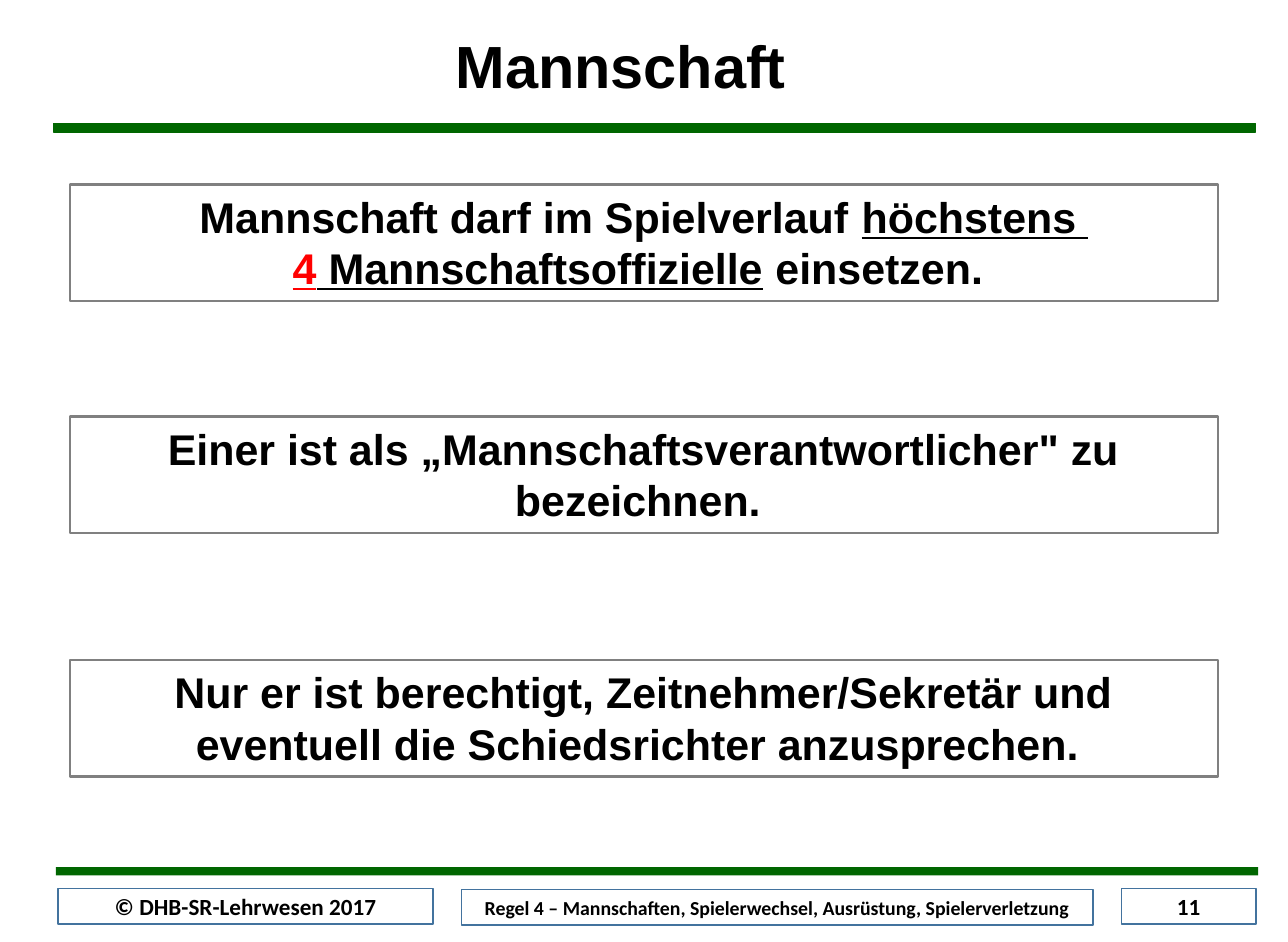
from pptx import Presentation
from pptx.dml.color import RGBColor
from pptx.enum.shapes import MSO_SHAPE
from pptx.enum.text import MSO_ANCHOR, MSO_AUTO_SIZE, PP_ALIGN
from pptx.util import Inches, Pt

RECT = MSO_SHAPE.RECTANGLE
CENTER = PP_ALIGN.CENTER
TOP, MIDDLE = MSO_ANCHOR.TOP, MSO_ANCHOR.MIDDLE

GREEN, GREY, BLUE = "006600", "808080", "43739E"
BLACK, WHITE, RED = "000000", "FFFFFF", "FF0000"

TITLE = "Mannschaft"
BARS = [(0.45, 1.04, GREEN), (0.47, 7.29, None)]
FOOTERS = [
    (0.49, 7.47, 3.15, 14, "© DHB-SR-Lehrwesen 2017"),
    (9.43, 7.47, 1.13, 14, "11"),
    (3.88, 7.48, 5.31, 12,
     "Regel 4 – Mannschaften, Spielerwechsel, Ausrüstung, Spielerverletzung"),
]
RULES = [
    (1.55, [
        [("Mannschaft darf im Spielverlauf ", BLACK, False),
         ("höchstens ", BLACK, True)],
        [("4", RED, True),
         (" Mannschaftsoffizielle", BLACK, True),
         (" einsetzen. ", BLACK, False)],
    ]),
    (3.5, [[("Einer ist als „Mannschaftsverantwortlicher\" zu bezeichnen. ",
             BLACK, False)]]),
    (5.55, [[("Nur er ist berechtigt, Zeitnehmer/Sekretär und eventuell "
              "die Schiedsrichter anzusprechen.\u00a0", BLACK, False)]]),
]


def rgb(color):
    return RGBColor.from_string(color)


def add_rect(s, box, fill=None, line=None, width=1):
    sp = s.shapes.add_shape(RECT, *[Inches(v) for v in box])
    sp.shadow.inherit = False
    if fill:
        sp.fill.solid()
        sp.fill.fore_color.rgb = rgb(fill)
    else:
        sp.fill.background()
    if line:
        sp.line.color.rgb = rgb(line)
        sp.line.width = Pt(width)
    else:
        sp.line.fill.background()
    return sp


def set_frame(tf, anchor, side=0.1):
    tf.word_wrap = True
    tf.vertical_anchor = anchor
    tf.margin_left = tf.margin_right = Inches(side)
    tf.margin_top = tf.margin_bottom = Inches(0.05)


def format_paragraph(p, size, font):
    p.alignment = CENTER
    p.font.size = Pt(size)
    p.font.name = font
    p.font.bold = True
    p.font.color.rgb = rgb(BLACK)


def add_title(s):
    sp = s.shapes.title
    sp.left, sp.top, sp.width, sp.height = [
        Inches(v) for v in (3.37, 0.26, 3.7, 0.63)]
    tf = sp.text_frame
    tf.text = TITLE
    set_frame(tf, TOP)
    tf.auto_size = MSO_AUTO_SIZE.NONE
    p = tf.paragraphs[0]
    format_paragraph(p, 36, "Arial")
    p.line_spacing = 0.9


def add_footer(s, left, top, width, size, text):
    sp = add_rect(s, (left, top, width, 0.3), WHITE, BLUE)
    tf = sp.text_frame
    tf.text = text
    set_frame(tf, MIDDLE)
    format_paragraph(tf.paragraphs[0], size, "Calibri")


def add_rule(s, top, lines):
    sp = add_rect(s, (0.59, top, 9.65, 0.98), None, GREY, 1.5)
    tf = sp.text_frame
    set_frame(tf, TOP, 0.11)
    tf.auto_size = MSO_AUTO_SIZE.SHAPE_TO_FIT_TEXT
    for i, runs in enumerate(lines):
        p = tf.add_paragraph() if i else tf.paragraphs[0]
        format_paragraph(p, 26, "Arial")
        for text, color, underline in runs:
            r = p.add_run()
            r.text = text
            r.font.color.rgb = rgb(color)
            r.font.underline = underline


def main():
    prs = Presentation()
    prs.slide_width, prs.slide_height = Inches(10.83), Inches(7.92)
    s = prs.slides.add_slide(prs.slide_layouts[5])
    for left, top, line in BARS:
        add_rect(s, (left, top, 10.11, 0.07), GREEN, line, 0.75)
    for footer in FOOTERS:
        add_footer(s, *footer)
    for top, lines in RULES:
        add_rule(s, top, lines)
    add_title(s)
    prs.save("out.pptx")


if __name__ == "__main__":
    main()
